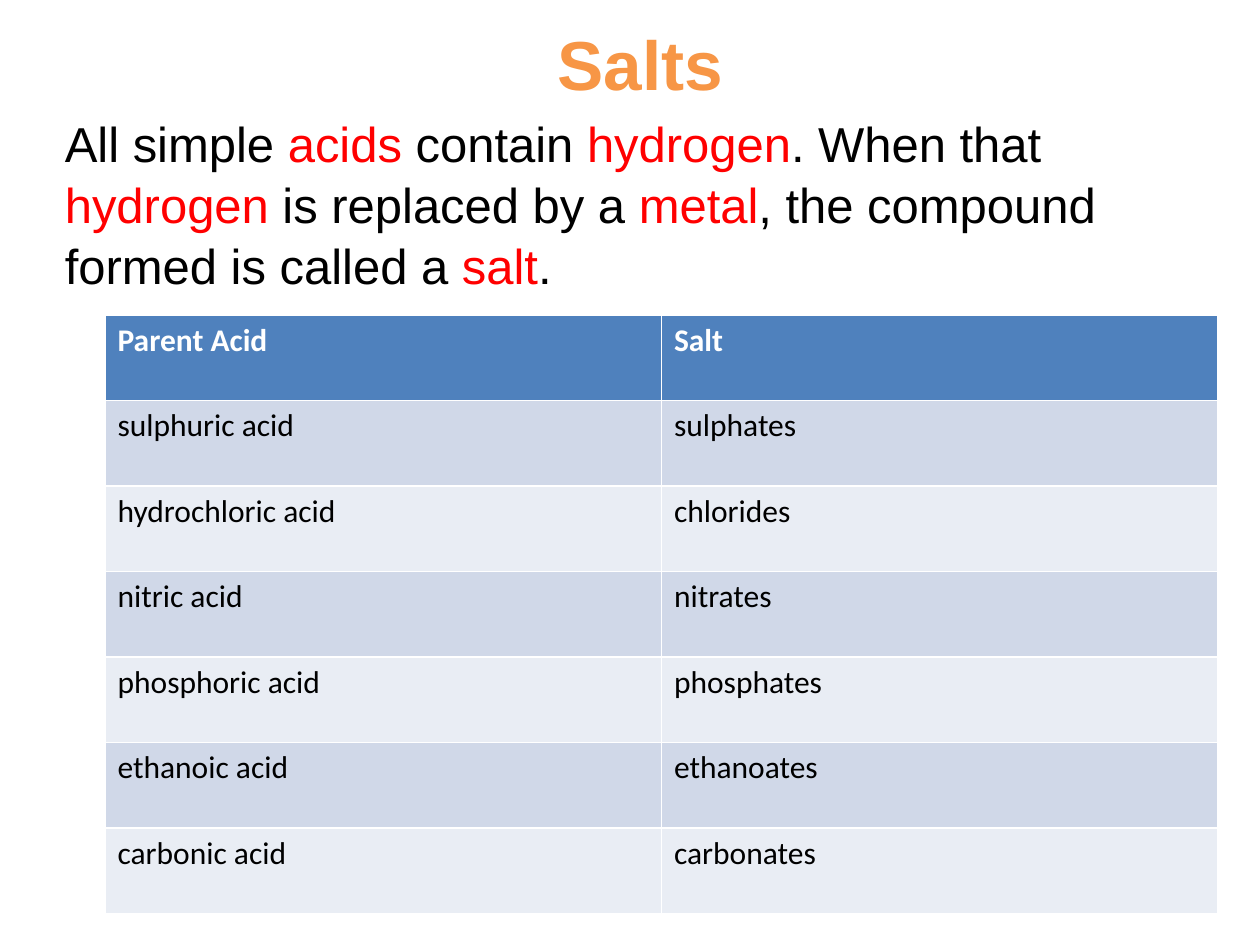
"""Build a slide on salts and their parent acids."""
from pptx import Presentation
from pptx.dml.color import RGBColor
from pptx.enum.text import MSO_ANCHOR, PP_ALIGN
from pptx.util import Pt

ORANGE = RGBColor(0xF7, 0x96, 0x46)
RED = RGBColor(0xFF, 0x00, 0x00)
BLACK = RGBColor(0x00, 0x00, 0x00)
WHITE = RGBColor(0xFF, 0xFF, 0xFF)
BLUE = RGBColor(0x4F, 0x81, 0xBD)
BANDS = [RGBColor(0xE9, 0xED, 0xF4), RGBColor(0xD0, 0xD8, 0xE8)]

DEFINITION = [
    "All simple ", "acids", " contain ", "hydrogen", ". When that ",
    "hydrogen", " is replaced by a ", "metal",
    ", the compound formed is called a ", "salt", ".",
]
SALTS = [
    ("Parent Acid", "Salt"),
    ("sulphuric acid", "sulphates"),
    ("hydrochloric acid", "chlorides"),
    ("nitric acid", "nitrates"),
    ("phosphoric acid", "phosphates"),
    ("ethanoic acid", "ethanoates"),
    ("carbonic acid", "carbonates"),
]


def style(run, font, size, color, bold=False):
    run.font.name = font
    run.font.size = Pt(size)
    run.font.color.rgb = color
    run.font.bold = bold


deck = Presentation()
deck.slide_width, deck.slide_height = Pt(720), Pt(540)
slide = deck.slides.add_slide(deck.slide_layouts[6])

title = slide.shapes.add_textbox(Pt(60), Pt(6), Pt(612), Pt(60)).text_frame
title.word_wrap = True
title.vertical_anchor = MSO_ANCHOR.MIDDLE
title.text = "Salts"
heading = title.paragraphs[0]
heading.alignment = PP_ALIGN.CENTER
style(heading.runs[0], "Arial", 39.6, ORANGE, bold=True)

body = slide.shapes.add_textbox(Pt(30), Pt(60), Pt(678), Pt(468)).text_frame
body.word_wrap = True
definition = body.paragraphs[0]
definition.space_before = Pt(3)
definition.line_spacing = 1.04
for index, words in enumerate(DEFINITION):
    run = definition.add_run()
    run.text = words
    style(run, "Arial", 28, RED if index % 2 else BLACK)

table = slide.shapes.add_table(
    len(SALTS), 2, Pt(60), Pt(180), Pt(636), Pt(342)
).table
for row, names in enumerate(SALTS):
    for column, name in enumerate(names):
        cell = table.cell(row, column)
        cell.fill.solid()
        cell.fill.fore_color.rgb = BANDS[row % 2] if row else BLUE
        cell.text_frame.text = name
        style(cell.text_frame.paragraphs[0].runs[0], "Calibri", 18,
              BLACK if row else WHITE, bold=row == 0)

deck.save("out.pptx")
